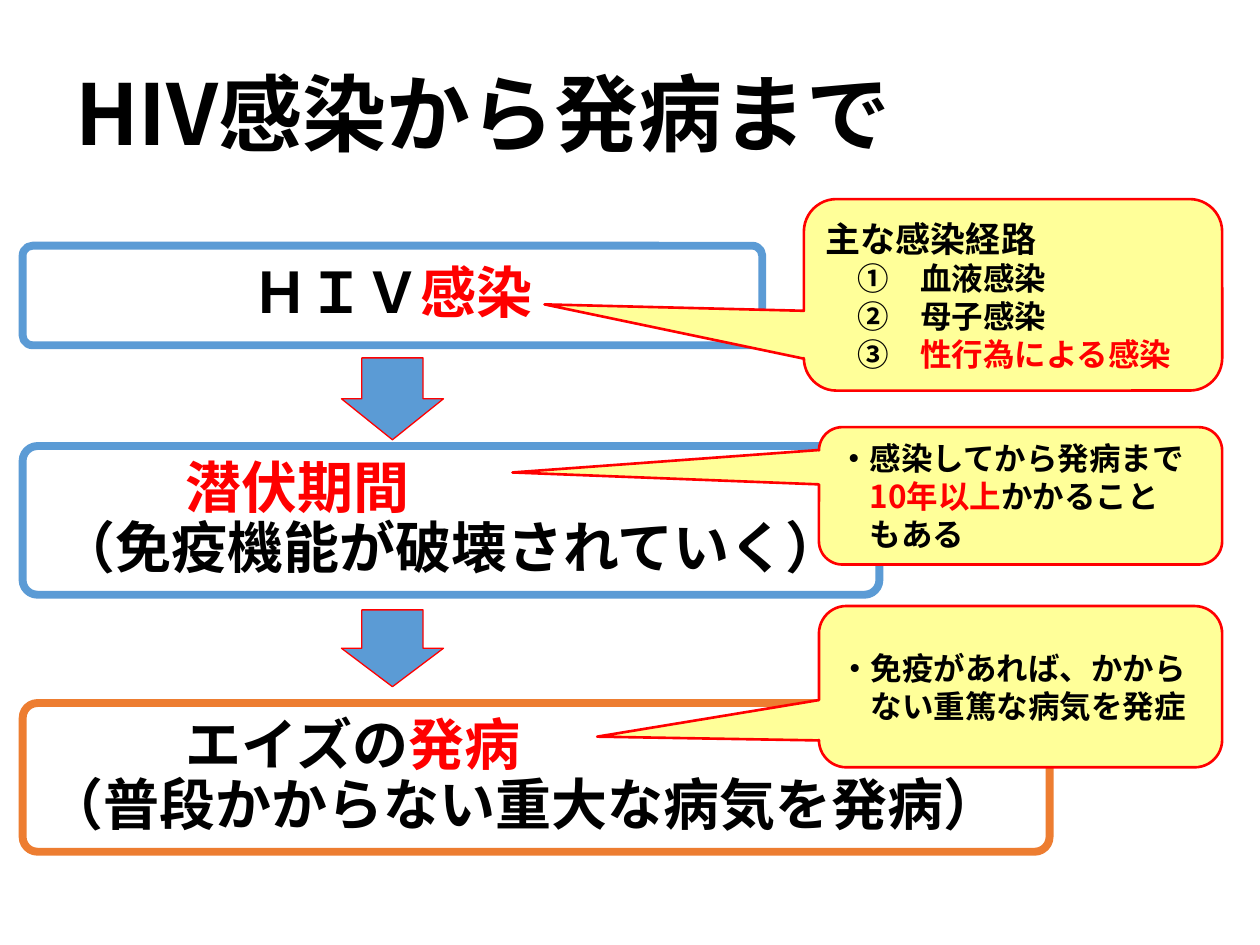
from pptx import Presentation
from pptx.dml.color import RGBColor
from pptx.enum.shapes import MSO_SHAPE as Shape
from pptx.enum.text import MSO_ANCHOR as Anchor, PP_ALIGN as Align
from pptx.oxml.ns import qn
from pptx.util import Inches, Pt
from lxml.etree import SubElement

BLACK = RGBColor(0, 0, 0)
WHITE = RGBColor(255, 255, 255)
RED = RGBColor(255, 0, 0)
BLUE = RGBColor(0x5B, 0x9B, 0xD5)
ORANGE = RGBColor(0xED, 0x7D, 0x31)
YELLOW = RGBColor(0xFF, 0xFF, 0x99)
FONT = "Noto Sans CJK JP"

presentation = Presentation()
presentation.slide_width = Inches(10)
presentation.slide_height = Inches(7.5)
slide = presentation.slides.add_slide(presentation.slide_layouts[6])
column = presentation.slide_width / 100
row = presentation.slide_height / 75


def add_box(kind, left, top, width, height, fill, line, line_width, adjustments):
    shape = slide.shapes.add_shape(
        kind, int(left * column), int(top * row), int(width * column), int(height * row))
    shape.shadow.inherit = False
    shape.fill.solid()
    shape.fill.fore_color.rgb = fill
    shape.line.color.rgb = line
    shape.line.width = Pt(line_width)
    for index, value in enumerate(adjustments):
        shape.adjustments[index] = value
    return shape


def write(shape, paragraphs, spacing=1.0):
    frame = shape.text_frame
    frame.word_wrap = True
    frame.vertical_anchor = Anchor.MIDDLE
    for index, (align, indent, size, runs) in enumerate(paragraphs):
        paragraph = frame.add_paragraph() if index else frame.paragraphs[0]
        paragraph.alignment = align
        paragraph.line_spacing = spacing
        if indent:
            paragraph._p.get_or_add_pPr().set("marL", str(int(indent * column)))
        for text, color in runs:
            run = paragraph.add_run()
            run.text = text
            run.font.size = Pt(size)
            run.font.bold = True
            run.font.name = FONT
            run.font.color.rgb = color
            SubElement(run._r.get_or_add_rPr(), qn("a:ea")).set("typeface", FONT)


title = slide.shapes.add_textbox(
    int(3.5 * column), int(5.9 * row), int(96.5 * column), int(6.9 * row))
write(title, [(Align.LEFT, 1.5, 48, [("HIV感染から発病まで", BLACK)])], 0.9)

stages = [
    (19.5, 58.7, 7.9, BLUE, [
        (Align.CENTER, 0, 32, [("ＨＩＶ", BLACK), ("感染", RED)])]),
    (35.4, 68, 11.8, BLUE, [
        (Align.LEFT, 11, 32, [("潜伏期間", RED)]),
        (Align.CENTER, 0, 32, [("（免疫機能が破壊されていく）", BLACK)])]),
    (55.8, 81.5, 11.8, ORANGE, [
        (Align.LEFT, 11, 32, [("エイズの", BLACK), ("発病", RED)]),
        (Align.LEFT, 0, 32, [("（普段かからない重大な病気を発病）", BLACK)])]),
]
for top, width, height, line, paragraphs in stages:
    stage = add_box(Shape.ROUNDED_RECTANGLE, 1.8, top, width, height, WHITE, line, 4.5, [0.1])
    frame = stage.text_frame
    frame.margin_left = frame.margin_right = int(1.6 * column)
    frame.margin_top = frame.margin_bottom = int(1.6 * row)
    write(stage, paragraphs, 0.9)

for top, height in [(28.4, 6.5), (48.4, 6.1)]:
    add_box(Shape.DOWN_ARROW, 27.1, top, 8.1, height, BLUE, RED, 0.75, [0.6, 0.5])

callouts = [
    (63.8, 15.8, 33.2, 15.2, (-1.12, 0.05), [
        (0, 20, [("主な感染経路", BLACK)]),
        (2.5, 18, [("①　血液感染", BLACK)]),
        (2.5, 18, [("②　母子感染", BLACK)]),
        (2.5, 18, [("③　", BLACK), ("性行為による感染", RED)])]),
    (65, 33.9, 32, 10.9, (-1.26, -0.17), [
        (0, 18, [("・感染してから発病まで", BLACK)]),
        (2.5, 18, [("10年以上", RED), ("かかること", BLACK)]),
        (2.5, 18, [("もある", BLACK)])]),
    (65, 48.1, 32, 12.8, (-1.05, 0.31), [
        (0, 18, [("・免疫があれば、かから", BLACK)]),
        (2.5, 18, [("ない重篤な病気を発症", BLACK)])]),
]
for left, top, width, height, tip, paragraphs in callouts:
    callout = add_box(Shape.ROUNDED_RECTANGULAR_CALLOUT, left, top, width, height,
                      YELLOW, RED, 1.5, [*tip, 0.17])
    write(callout, [(Align.LEFT, *paragraph) for paragraph in paragraphs])

presentation.save("out.pptx")
